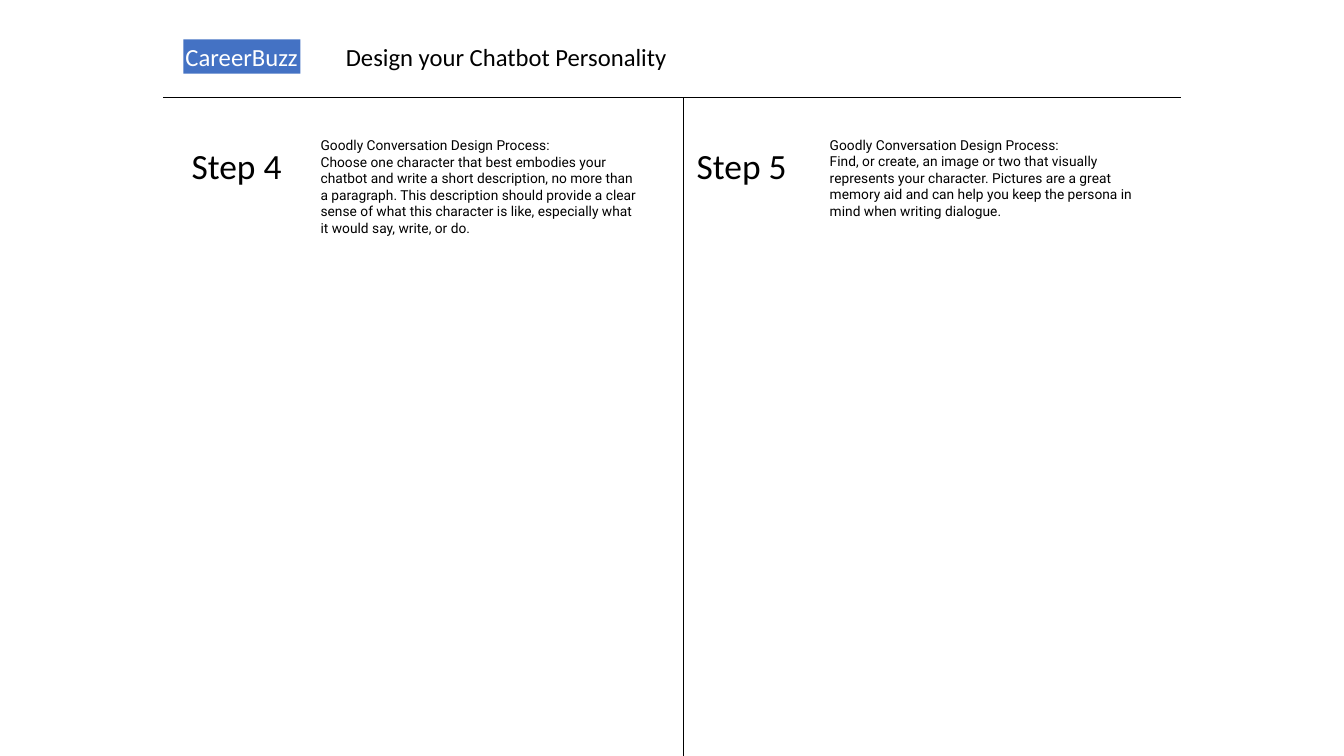
from dataclasses import dataclass

from pptx import Presentation
from pptx.dml.color import RGBColor
from pptx.enum import shapes, text
from pptx.util import Inches, Pt
from lxml import etree

NS = "http://schemas.openxmlformats.org/drawingml/2006/main"


@dataclass(frozen=True)
class Theme:
    ink: RGBColor = RGBColor(0, 0, 0)
    paper: RGBColor = RGBColor(255, 255, 255)
    blue: RGBColor = RGBColor(0x44, 0x72, 0xC4)
    head: tuple = ("Calibri", 17.6)
    step: tuple = ("Calibri", 25.3)
    body: tuple = ("Roboto", 9.8)
    inset: float = 0.02


THEME = Theme()
INTRO = "Goodly Conversation Design Process:"
STEPS = [
    ("Step 4", 1.88, 3.16, 3.2, 1.04,
     "Choose one character that best embodies your chatbot and write a short "
     "description, no more than a paragraph. This description should provide "
     "a clear sense of what this character is like, especially what it would "
     "say, write, or do."),
    ("Step 5", 6.89, 8.21, 3.27, 0.87,
     "Find, or create, an image or two that visually represents your "
     "character. Pictures are a great memory aid and can help you keep the "
     "persona in mind when writing dialogue."),
]


def write(shape, lines, style, color=THEME.ink, wrap=False):
    """Fill a shape with one paragraph per line."""
    frame = shape.text_frame
    gap = Inches(THEME.inset)
    form = {
        "margin_left": gap, "margin_right": gap,
        "margin_top": gap, "margin_bottom": gap,
        "vertical_anchor": text.MSO_ANCHOR.MIDDLE,
        "auto_size": text.MSO_AUTO_SIZE.SHAPE_TO_FIT_TEXT,
        "word_wrap": wrap,
    }
    for key, value in form.items():
        setattr(frame, key, value)
    frame.text = "\n".join(lines)
    name, size = style
    for para in frame.paragraphs:
        para.alignment = text.PP_ALIGN.LEFT
        for run in para.runs:
            for key, value in {"name": name, "size": Pt(size)}.items():
                setattr(run.font, key, value)
            run.font.color.rgb = color


def add_text(slide, box, lines, style, wrap=False):
    shape = slide.shapes.add_textbox(*map(Inches, box))
    write(shape, lines, style, wrap=wrap)


def add_badge(slide, box, label):
    shape = slide.shapes.add_shape(
        shapes.MSO_SHAPE.RECTANGLE, *map(Inches, box))
    shape.shadow.inherit = False
    shape.fill.solid()
    shape.fill.fore_color.rgb = THEME.blue
    shape.line.fill.background()
    write(shape, [label], THEME.head, THEME.paper)


def add_rule(slide, *ends):
    rule = slide.shapes.add_connector(
        shapes.MSO_CONNECTOR.STRAIGHT, *map(Inches, ends))
    rule.line.width = Pt(1)
    rule.line.color.rgb = THEME.ink
    etree.SubElement(rule.element.spPr, f"{{{NS}}}effectLst")


def add_step(slide, title, left, note, width, height, words):
    add_text(slide, (note, 1.33, width, height), [INTRO, words],
             THEME.body, wrap=True)
    add_text(slide, (left, 1.41, 1.03, 0.47), [title], THEME.step)


def main():
    deck = Presentation()
    deck.slide_width, deck.slide_height = Inches(13.33), Inches(7.5)
    slide = deck.slides.add_slide(deck.slide_layouts[6])
    add_rule(slide, 1.62, 0.97, 11.71, 0.97)
    add_rule(slide, 6.78, 7.5, 6.78, 0.97)
    add_badge(slide, (1.82, 0.39, 1.16, 0.34), "CareerBuzz")
    add_text(slide, (3.41, 0.39, 3.25, 0.34),
             ["Design your Chatbot Personality"], THEME.head)
    for step in STEPS:
        add_step(slide, *step)
    deck.save("out.pptx")


if __name__ == "__main__":
    main()
